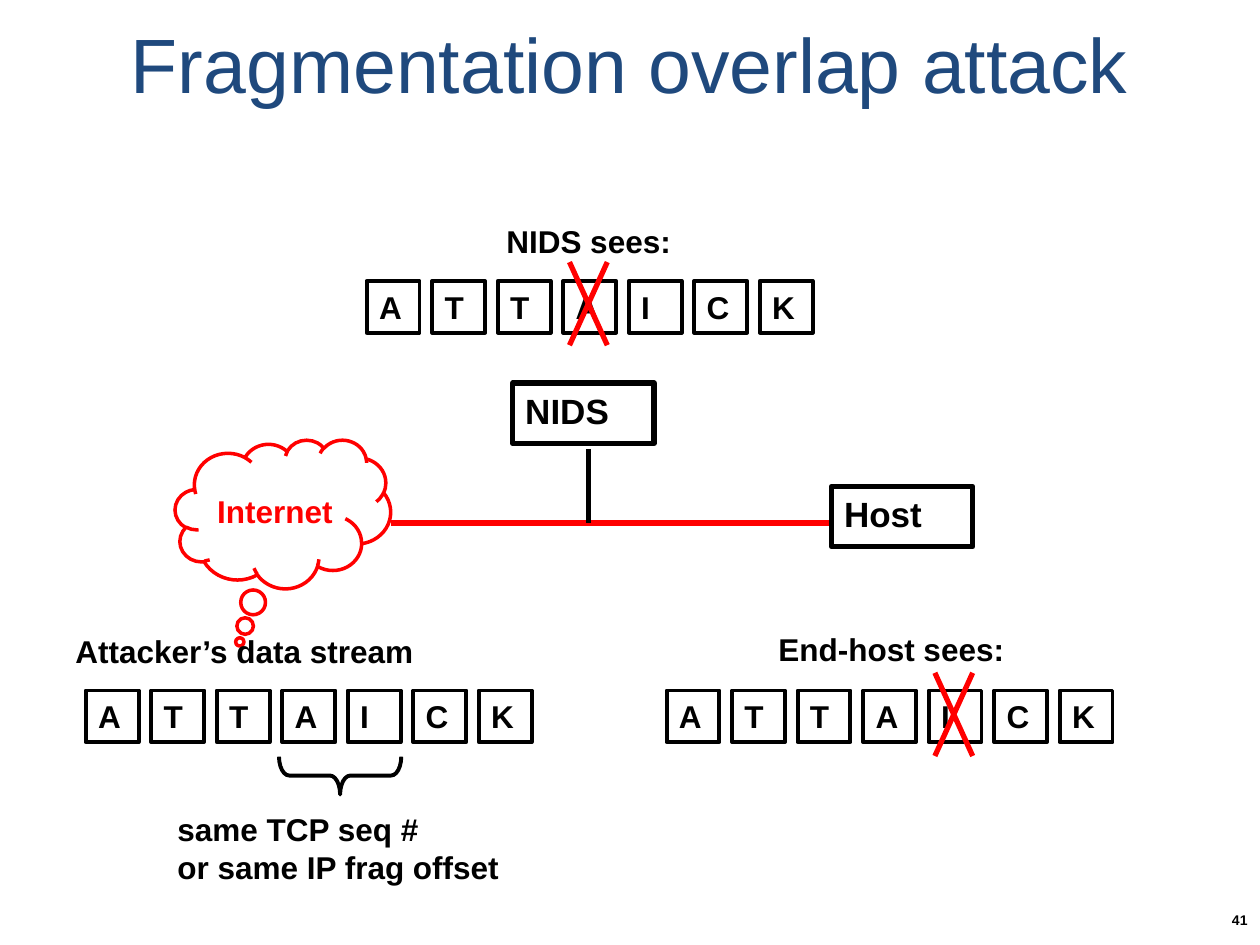
import dataclasses

import pptx
import pptx.dml.color
import pptx.enum.shapes
import pptx.enum.text
import pptx.oxml.xmlchemy
import pptx.util
from lxml import etree

PX = 9144  # EMU, 100 px to the inch
FONT = "Arial"
BLACK, RED, NAVY = "000000", "FF0000", "1F497D"
WORD = "ATTAICK"
CELL_W, CELL_H, CELL_PITCH = 42, 41, 52
A_NS = "http://schemas.openxmlformats.org/drawingml/2006/main"

SHAPE = pptx.enum.shapes.MSO_SHAPE
ALIGN = pptx.enum.text.PP_ALIGN
ANCHOR = pptx.enum.text.MSO_ANCHOR
AUTO = pptx.enum.text.MSO_AUTO_SIZE


@dataclasses.dataclass
class Box:
    x: int
    y: int
    w: int
    h: int


@dataclasses.dataclass
class Line:
    x1: int
    y1: int
    x2: int
    y2: int
    color: str = RED


@dataclasses.dataclass
class Label:
    text: str
    box: Box


@dataclasses.dataclass
class Stream:
    x: int
    y: int


LABELS = [
    Label("End-host sees:", Box(608, 495, 199, 40)),
    Label("NIDS sees:", Box(392, 171, 151, 40)),
    Label("Attacker’s data stream", Box(50, 497, 288, 40)),
    Label("same TCP seq #\nor same IP frag offset", Box(131, 638, 276, 70)),
]
MACHINES = [
    Label("NIDS", Box(407, 304, 112, 48)),
    Label("Host", Box(660, 386, 112, 48)),
]
LINKS = [Line(310, 415, 660, 415), Line(467, 415, 467, 356, BLACK)]
STREAMS = [Stream(68, 548), Stream(529, 548), Stream(291, 223)]
CROSSES = [Box(452, 208, 30, 66), Box(742, 534, 30, 66)]


def px(n: int) -> int:
    return pptx.util.Emu(n * PX)


def rgb(color: str) -> pptx.dml.color.RGBColor:
    return pptx.dml.color.RGBColor.from_string(color)


def frame(box: Box) -> list[int]:
    return [px(n) for n in (box.x, box.y, box.w, box.h)]


def write(s, text: str, size: int = 18, color: str = BLACK, bold: bool = True,
          align=ALIGN.LEFT, anchor=ANCHOR.MIDDLE, wrap: bool = False,
          grow: bool = False) -> None:
    tf = s.text_frame
    tf.word_wrap = wrap
    tf.vertical_anchor = anchor
    tf.auto_size = AUTO.SHAPE_TO_FIT_TEXT if grow else AUTO.NONE
    for i, line in enumerate(text.split("\n")):
        p = tf.add_paragraph() if i else tf.paragraphs[0]
        p.alignment = align
        r = p.add_run()
        r.text = line
        r.font.name = FONT
        r.font.size = pptx.util.Pt(size)
        r.font.bold = bold
        r.font.color.rgb = rgb(color)


def add_text(slide, label: Label, **fmt) -> None:
    write(slide.shapes.add_textbox(*frame(label.box)), label.text, **fmt)


def add_outline(slide, kind, box: Box, color: str = BLACK, width: float = 2.25):
    s = slide.shapes.add_shape(kind, *frame(box))
    s.shadow.inherit = False
    s.fill.background()
    s.line.color.rgb = rgb(color)
    s.line.width = pptx.util.Pt(width)
    return s


def add_line(slide, line: Line) -> None:
    s = slide.shapes.add_connector(
        pptx.enum.shapes.MSO_CONNECTOR.STRAIGHT,
        px(line.x1), px(line.y1), px(line.x2), px(line.y2))
    s.line.color.rgb = rgb(line.color)
    s.line.width = pptx.util.Pt(3)
    etree.SubElement(s._element.spPr, f"{{{A_NS}}}effectLst")


def add_stream(slide, stream: Stream) -> None:
    """Draw one row of lettered fragments."""
    for i, letter in enumerate(WORD):
        box = Box(stream.x + i * CELL_PITCH, stream.y, CELL_W, CELL_H)
        write(add_outline(slide, SHAPE.RECTANGLE, box), letter)


def add_cross(slide, box: Box) -> None:
    right, bottom = box.x + box.w, box.y + box.h
    add_line(slide, Line(box.x, box.y, right, bottom))
    add_line(slide, Line(right, box.y, box.x, bottom))


def add_internet(slide) -> None:
    cloud = add_outline(slide, SHAPE.CLOUD_CALLOUT, Box(139, 349, 171, 118), RED, 2)
    cloud.adjustments[0] = -0.2
    cloud.adjustments[1] = 0.86
    write(cloud, "Internet", color=RED)


def add_brace(slide) -> None:
    brace = add_outline(slide, SHAPE.LEFT_BRACE, Box(255, 567, 30, 97))
    brace.adjustments[0] = 0.27
    brace.rotation = 270


def main() -> None:
    prs = pptx.Presentation()
    prs.slide_width, prs.slide_height = px(1000), px(750)
    slide = prs.slides.add_slide(prs.slide_layouts[6])

    add_text(slide, Label("Fragmentation overlap attack", Box(50, 0, 900, 100)),
             size=44, color=NAVY, bold=False, align=ALIGN.CENTER, wrap=True)
    add_text(slide, Label("41", Box(931, 710, 69, 40)),
             size=8, align=ALIGN.RIGHT, wrap=True)
    add_internet(slide)
    for label in LABELS:
        add_text(slide, label, anchor=ANCHOR.TOP, grow=True)
    for link in LINKS:
        add_line(slide, link)
    for machine in MACHINES:
        s = add_outline(slide, SHAPE.RECTANGLE, machine.box, width=3)
        write(s, machine.text, size=20, anchor=ANCHOR.TOP, wrap=True, grow=True)
    add_brace(slide)
    for stream in STREAMS:
        add_stream(slide, stream)
    for cross in CROSSES:
        add_cross(slide, cross)

    prs.save("out.pptx")


if __name__ == "__main__":
    main()
